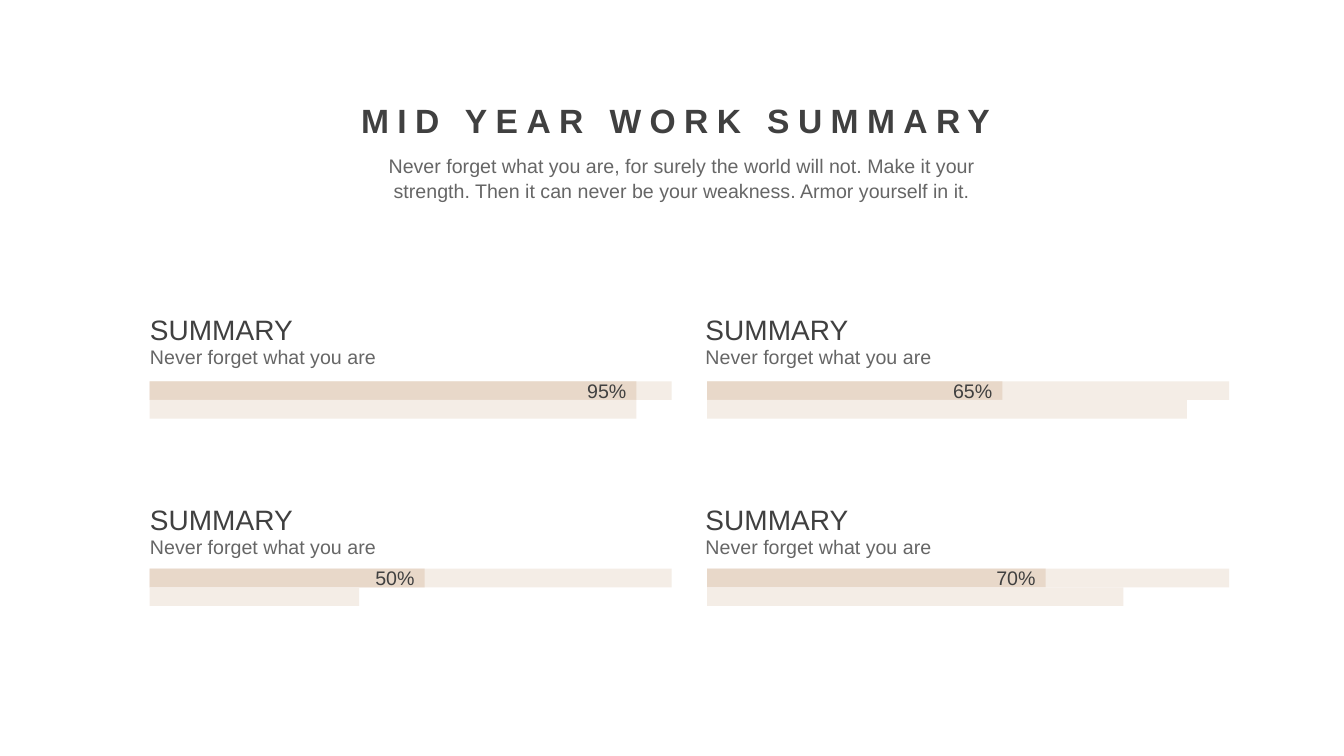
import pptx
import pptx.dml.color
import pptx.enum.shapes
import pptx.enum.text
import pptx.oxml.ns
import pptx.util

Cm = pptx.util.Cm
Pt = pptx.util.Pt
ALIGN = pptx.enum.text.PP_ALIGN

COLORS = {
    "dark": "404040",
    "grey": "666666",
    "bar": "E8D8C9",
    "track": "F4EDE6",
}
FONT = "Arial"
TRACK_WIDTH = 13.16
BAR_HEIGHT = 0.47

# Left edge of the labels and of the bars in each column
COLUMNS = [(3.53, 3.77), (17.53, 17.82)]
# Top edge of the labels and of the bars in each row
ROWS = [(7.75, 9.61), (12.55, 14.33)]
# Percentage, width of the upper bar, width of the lower bar
METRICS = [
    [("95%", 12.27, 12.27), ("65%", 7.44, 12.09)],
    [("50%", 6.93, 5.28), ("70%", 8.53, 10.49)],
]


def color(name):
    return pptx.dml.color.RGBColor.from_string(COLORS[name])


def add_span(para, text, size, color_name, bold=False, spacing=None):
    span = para.add_run()
    span.text = text
    span.font.name = FONT
    span.font.size = Pt(size)
    span.font.bold = bold
    span.font.color.rgb = color(color_name)
    if spacing is not None:
        span.font._element.set("spc", str(spacing * 100))


def add_label(page, box, text, size, color_name, align=ALIGN.LEFT,
              wrap=False, line_height=None, **style):
    label = page.shapes.add_textbox(*(Cm(length) for length in box))
    frame = label.text_frame
    frame.word_wrap = wrap
    frame.auto_size = pptx.enum.text.MSO_AUTO_SIZE.SHAPE_TO_FIT_TEXT
    para = frame.paragraphs[0]
    para.alignment = align
    if line_height:
        para.line_spacing = Pt(line_height)
    add_span(para, text, size, color_name, **style)


def add_bar(page, left, top, width, color_name, text=None):
    bar = page.shapes.add_shape(
        pptx.enum.shapes.MSO_SHAPE.RECTANGLE,
        Cm(left), Cm(top), Cm(width), Cm(BAR_HEIGHT))
    bar.shadow.inherit = False
    bar.fill.solid()
    bar.fill.fore_color.rgb = color(color_name)
    bar.line.fill.background()
    if text:
        bar.text_frame.vertical_anchor = pptx.enum.text.MSO_ANCHOR.MIDDLE
        para = bar.text_frame.paragraphs[0]
        para.alignment = ALIGN.RIGHT
        add_span(para, text, 14, "dark")


def add_heading(page, left, top):
    add_label(page, (left + 0.05, top, 16.74, 1.27), "MID YEAR WORK SUMMARY",
              24, "dark", ALIGN.CENTER, bold=True, spacing=6)
    add_label(page, (left, top + 1.32, 17.15, 1.5),
              "Never forget what you are, for surely the world will not. "
              "Make it your strength. Then it can never be your weakness. "
              "Armor yourself in it.",
              14, "grey", ALIGN.CENTER, wrap=True, line_height=18)


def add_metric(page, column, row, metric):
    label_left, bar_left = column
    label_top, bar_top = row
    percent, upper_width, lower_width = metric
    # Track with its two bars
    add_bar(page, bar_left, bar_top, TRACK_WIDTH, "track")
    add_bar(page, bar_left, bar_top, upper_width, "bar", percent)
    add_bar(page, bar_left, bar_top + BAR_HEIGHT, lower_width, "track")
    # Labels above the bars
    add_label(page, (label_left, label_top, 4.24, 1.11), "SUMMARY", 20, "dark")
    add_label(page, (label_left, label_top + 0.81, 6.22, 0.86),
              "Never forget what you are", 14, "grey")


def main():
    deck = pptx.Presentation()
    deck.slide_width = Cm(33.87)
    deck.slide_height = Cm(19.05)
    page = deck.slides.add_slide(deck.slide_layouts[6])

    add_heading(page, 8.61, 2.39)
    for row, metrics in zip(ROWS, METRICS):
        for column, metric in zip(COLUMNS, metrics):
            add_metric(page, column, row, metric)

    deck.save("out.pptx")


if __name__ == "__main__":
    main()
